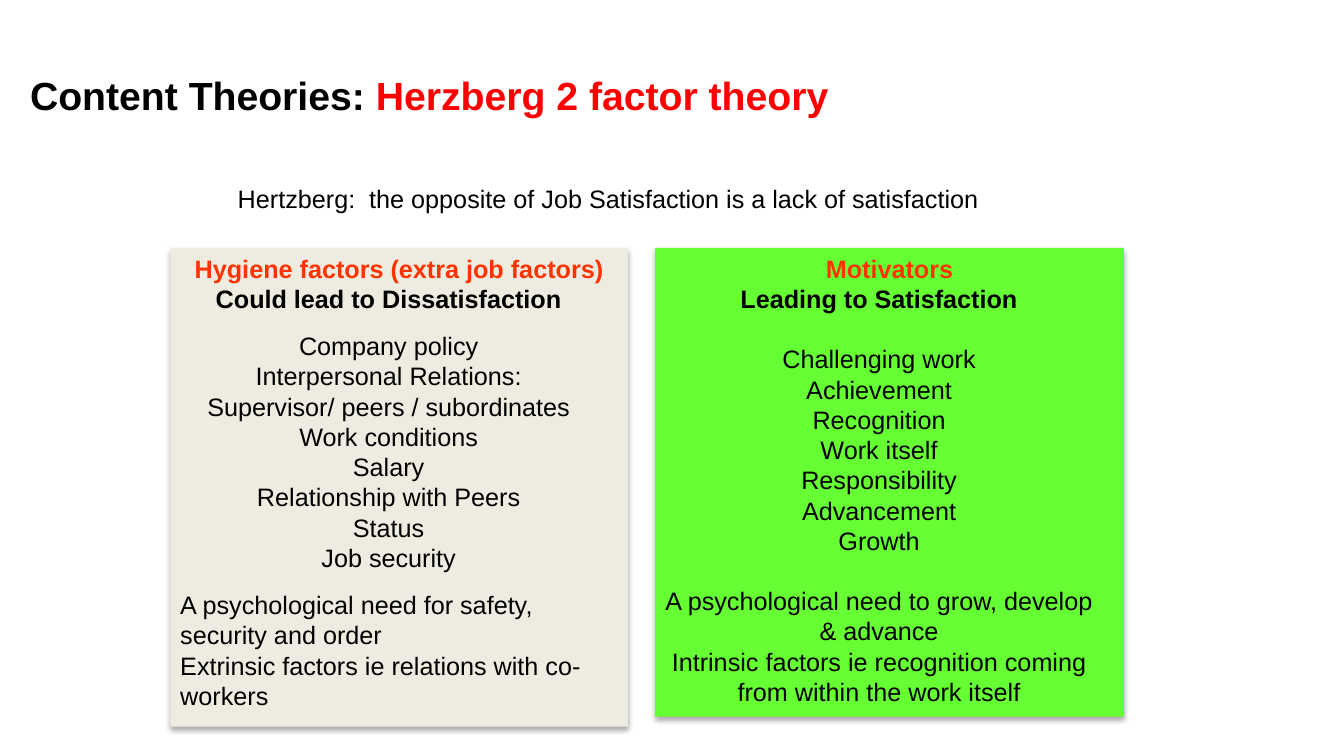
import pptx
import pptx.dml.color
import pptx.enum.shapes
import pptx.enum.text
import pptx.oxml
import pptx.util

Pt = pptx.util.Pt
RGBColor = pptx.dml.color.RGBColor
ALIGN = pptx.enum.text.PP_ALIGN

BLACK = RGBColor(0x00, 0x00, 0x00)
RED = RGBColor(0xFF, 0x00, 0x00)
ORANGE = RGBColor(0xFF, 0x33, 0x00)
GREEN = RGBColor(0x66, 0xFF, 0x33)
BEIGE = RGBColor(0xEE, 0xEC, 0xE1)

SHADOW = (
    '<a:effectLst xmlns:a="http://schemas.openxmlformats.org/drawingml/2006/main">'
    '<a:outerShdw blurRad="44450" dist="27940" dir="5400000" algn="ctr" rotWithShape="0">'
    '<a:srgbClr val="000000"><a:alpha val="32000"/></a:srgbClr>'
    '</a:outerShdw></a:effectLst>'
)


def style(p, size, color, bold=False, align=ALIGN.LEFT):
    p.alignment = align
    p.font.name = "Arial"
    p.font.size = Pt(size)
    p.font.bold = bold
    p.font.color.rgb = color


prs = pptx.Presentation()
prs.slide_width, prs.slide_height = Pt(960), Pt(540)
s = prs.slides.add_slide(prs.slide_layouts[6])

# Title
tf = s.shapes.add_textbox(Pt(14.4), Pt(51.1), Pt(644.4), Pt(76.3)).text_frame
tf.word_wrap = True
p = tf.paragraphs[0]
p.line_spacing = 0.9
style(p, 28, BLACK, bold=True)
p.add_run().text = "Content Theories: "
r = p.add_run()
r.text = "Herzberg 2 factor theory"
r.font.color.rgb = RED

# Statement above the panels
tf = s.shapes.add_textbox(Pt(162.7), Pt(127.4), Pt(548.6), Pt(28.8)).text_frame
p = tf.paragraphs[0]
p.text = "Hertzberg:  the opposite of Job Satisfaction is a lack of satisfaction"
style(p, 18, BLACK)

# Panels: left, width, height, fill, gap between groups, summary alignment,
# heading, effect, factors, summary
panels = [
    (468, 334.8, 334.8, GREEN, 21.6, ALIGN.CENTER,
     "Motivators", "Leading to Satisfaction",
     ["Challenging work", "Achievement", "Recognition", "Work itself",
      "Responsibility", "Advancement", "Growth"],
     ["A psychological need to grow, develop & advance",
      "Intrinsic factors ie recognition coming from within the work itself"]),
    (121.7, 326.9, 342, BEIGE, 12.2, ALIGN.LEFT,
     "Hygiene factors (extra job factors)", "Could lead to Dissatisfaction",
     ["Company policy", "Interpersonal Relations:",
      "Supervisor/ peers / subordinates", "Work conditions", "Salary",
      "Relationship with Peers", "Status", "Job security"],
     ["A psychological need for safety, security and order",
      "Extrinsic factors ie relations with co-workers"]),
]

for left, width, height, fill, gap, summary_align, heading, effect, factors, summary in panels:
    sp = s.shapes.add_shape(pptx.enum.shapes.MSO_SHAPE.RECTANGLE,
                            Pt(left), Pt(177.1), Pt(width), Pt(height))
    sp.fill.solid()
    sp.fill.fore_color.rgb = fill
    sp.line.fill.background()
    sp._element.spPr.append(pptx.oxml.parse_xml(SHADOW))

    tf = sp.text_frame
    tf.word_wrap = True
    tf.vertical_anchor = pptx.enum.text.MSO_ANCHOR.TOP
    p = tf.paragraphs[0]
    p.text = heading
    style(p, 18, ORANGE, bold=True, align=ALIGN.CENTER)

    p = tf.add_paragraph()
    p.text = effect
    p._p.get_or_add_pPr().set("marR", str(Pt(15)))
    style(p, 18, BLACK, bold=True, align=ALIGN.CENTER)

    for lines, align in ((factors, ALIGN.CENTER), (summary, summary_align)):
        for i, line in enumerate(lines):
            p = tf.add_paragraph()
            p.text = line
            p.space_before = Pt(0 if i else gap)
            style(p, 18, BLACK, align=align)

prs.save("out.pptx")
